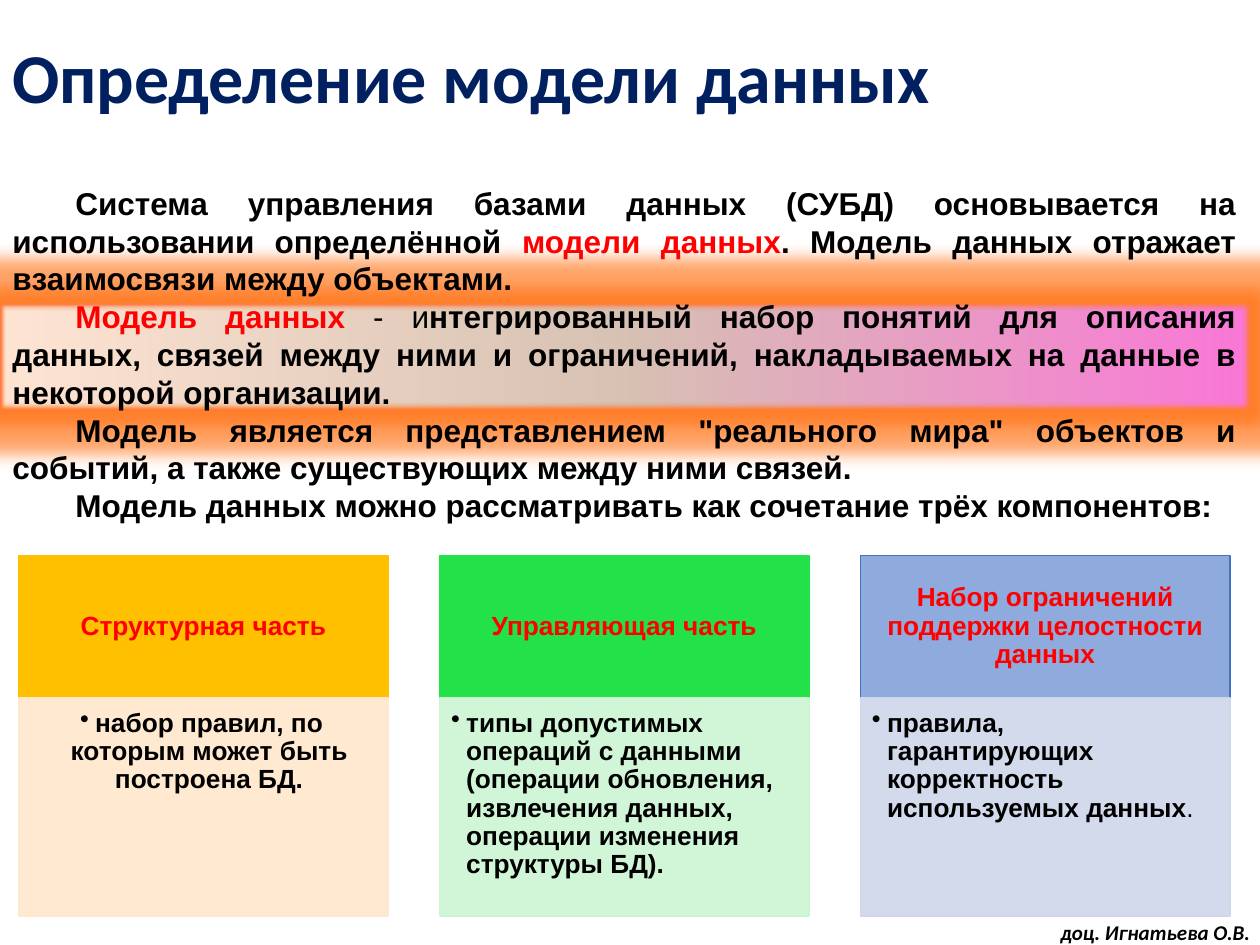
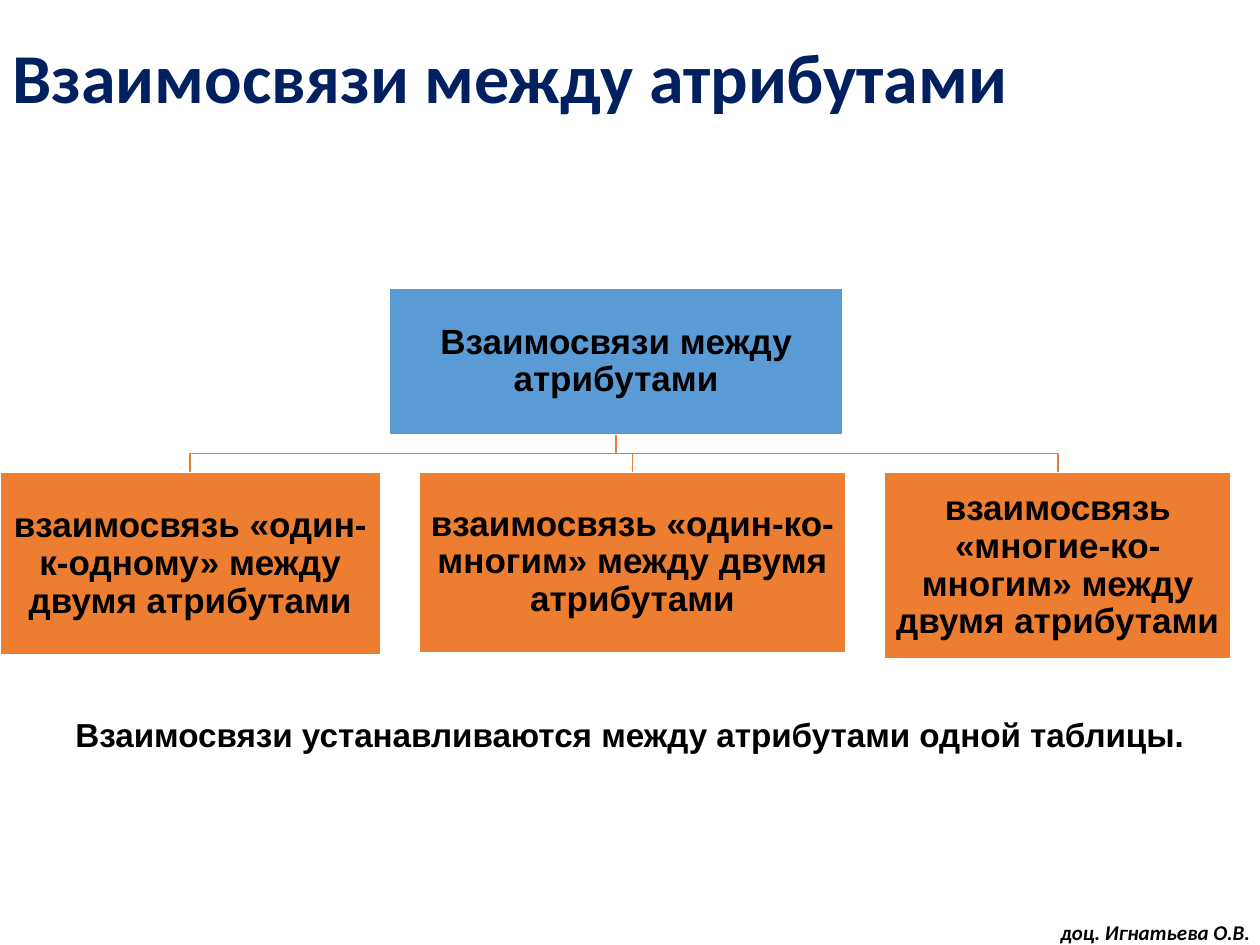
from lxml.etree import SubElement
from pptx import Presentation
from pptx.dml.color import RGBColor
from pptx.enum.shapes import MSO_SHAPE
from pptx.enum.text import MSO_ANCHOR, PP_ALIGN
from pptx.oxml import parse_xml
from pptx.oxml.ns import nsdecls, qn
from pptx.util import Inches, Pt

WIDTH, HEIGHT = 10, 7.5
BODY = 9.91
NAVY, RED, BLACK, WHITE = "002060", "FF0000", "000000", "FFFFFF"
PINK, ORANGE, BLUE = "FA76D7", "ED7D31", "5B9BD5"
INSET = (0.1, 0.05, 0.1, 0.05)

AUTHOR = "доц. Игнатьева О.В."

# A run is plain text or (text, colour, bold).
MODEL = "Определение модели данных"
INTRO = [
    ["Система управления базами данных (СУБД) основывается на использовании определённой ",
     ("модели данных", RED, True),
     ". Модель данных отражает взаимосвязи между объектами. "],
    [("Модель данных ", RED, True), ("- и", BLACK, False),
     "нтегрированный набор понятий для описания данных, связей между ними и ограничений, "
     "накладываемых на данные в некоторой организации."],
    ["Модель является представлением \"реального мира\" объектов и событий, "
     "а также существующих между ними связей. "],
    ["Модель данных можно рассматривать как сочетание трёх компонентов:"],
]
# Head, detail runs, head fill, head line, detail fill, detail alignment
PARTS = [
    ("Структурная часть", ["набор правил, по которым может быть построена БД."],
     "FFC000", "FFC000", "FFE8CC", PP_ALIGN.CENTER),
    ("Управляющая часть",
     ["типы допустимых операций с данными (операции обновления, извлечения данных, "
      "операции изменения структуры БД)."],
     "23E148", "23E148", "CCF6D3", PP_ALIGN.LEFT),
    ("Набор ограничений поддержки целостности данных",
     ["правила, гарантирующих корректность используемых данных", (".", BLACK, False)],
     "8FAADC", "4472C4", "CFD6EA", PP_ALIGN.LEFT),
]
LINKS = "Взаимосвязи между атрибутами"
# Kind of link, width, height
KINDS = [
    ("взаимосвязь «один-к-одному» между двумя атрибутами", 3.02, 1.45),
    ("взаимосвязь «один-ко-многим» между двумя атрибутами", 3.38, 1.43),
    ("взаимосвязь «многие-ко-многим» между двумя атрибутами", 2.75, 1.48),
]
NOTE = "Взаимосвязи устанавливаются между атрибутами одной таблицы."


def rgb(code):
    return RGBColor.from_string(code)


def write(shape, paras, size, color=BLACK, face="Arial", align=PP_ALIGN.LEFT,
          anchor=MSO_ANCHOR.TOP, inset=INSET, space=None, first=0, bullet=False,
          italic=False, wrap=True):
    """Fill a shape with paragraphs, each a list of runs."""
    frame = shape.text_frame
    frame.word_wrap = wrap
    frame.vertical_anchor = anchor
    (frame.margin_left, frame.margin_top,
     frame.margin_right, frame.margin_bottom) = map(Inches, inset)
    for i, runs in enumerate(paras):
        para = frame.add_paragraph() if i else frame.paragraphs[0]
        para.alignment = align
        if space:
            para.line_spacing = space
        props = para._p.get_or_add_pPr()
        props.set("indent", str(Inches(first)))
        if bullet:
            props.set("marL", str(Inches(-first)))
            SubElement(props, qn("a:buChar")).set("char", "•")
        font = para.font
        font.size, font.name, font.italic = Pt(size), face, italic
        for item in runs:
            text, tint, bold = (item, color, True) if isinstance(item, str) else item
            run = para.add_run()
            run.text = text
            run.font.bold = bold
            run.font.color.rgb = rgb(tint)


def label(slide, x, y, w, h, paras, size, **style):
    box = slide.shapes.add_textbox(*map(Inches, (x, y, w, h)))
    write(box, paras, size, **style)


def panel(slide, x, y, w, h, fill, line, alpha=None):
    box = slide.shapes.add_shape(MSO_SHAPE.RECTANGLE, *map(Inches, (x, y, w, h)))
    box.shadow.inherit = False
    box.fill.solid()
    box.fill.fore_color.rgb = rgb(fill)
    box.line.color.rgb = rgb(line)
    box.line.width = Pt(1)
    if alpha:
        tint = box._element.spPr.find(qn("a:solidFill"))[0]
        SubElement(tint, qn("a:alpha")).set("val", str(alpha * 1000))
    return box


def glow(slide, x, y, w, h):
    """Add a gradient band with a soft orange halo."""
    band = panel(slide, x, y, w, h, PINK, PINK)
    props = band._element.spPr
    stops = "".join(
        f'<a:gs pos="{pos * 1000}"><a:srgbClr val="{tint}"/></a:gs>'
        for pos, tint in ((0, PINK), (50, "D6C1B2"), (100, "FEE4D3")))
    props.replace(props.find(qn("a:solidFill")), parse_xml(
        f'<a:gradFill {nsdecls("a")}><a:gsLst>{stops}</a:gsLst>'
        '<a:lin ang="10800000" scaled="0"/></a:gradFill>'))
    props.replace(props.find(qn("a:effectLst")), parse_xml(
        f'<a:effectLst {nsdecls("a")}><a:glow rad="228600"><a:srgbClr val="FF6600">'
        '<a:alpha val="60000"/></a:srgbClr></a:glow><a:softEdge rad="31750"/></a:effectLst>'))


def branch(slide, points):
    points = [tuple(map(Inches, point)) for point in points]
    form = slide.shapes.build_freeform(*points[0])
    form.add_line_segments(points[1:], close=False)
    path = form.convert_to_shape()
    path.shadow.inherit = False
    path.fill.background()
    path.line.color.rgb = rgb(ORANGE)
    path.line.width = Pt(1)


def start(deck, title):
    """Add a slide with its title and footer."""
    slide = deck.slides.add_slide(deck.slide_layouts[6])
    label(slide, 0, 0.11, WIDTH, 1.07, [[title]], 40, color=NAVY, face="Calibri",
          anchor=MSO_ANCHOR.MIDDLE, space=0.9)
    label(slide, 8.32, 7.25, 1.73, 0.3, [[AUTHOR]], 12, face="Calibri",
          italic=True, wrap=False)
    return slide


def model(deck):
    slide = start(deck, MODEL)
    glow(slide, 0, 2.41, BODY, 0.83)
    label(slide, 0, 1.41, BODY, 3, INTRO, 18, align=PP_ALIGN.JUSTIFY, first=0.5)
    left, top, wide, head, rest, step = 0.15, 4.41, 2.93, 1.13, 1.73, 3.34
    for i, (name, runs, fill, line, pale, align) in enumerate(PARTS):
        x = left + i * step
        box = panel(slide, x, top, wide, head, fill, line)
        write(box, [[name]], 15, color=RED, align=PP_ALIGN.CENTER, space=0.9,
              anchor=MSO_ANCHOR.MIDDLE, inset=(0.12, 0.07, 0.12, 0.07))
        box = panel(slide, x, top + head, wide, rest, pale, pale, alpha=90)
        write(box, [runs], 15, align=align, space=0.9, first=-0.12, bullet=True,
              inset=(0.09, 0.09, 0.12, 0.13))


def links(deck):
    slide = start(deck, LINKS)
    left, top, wide, high = 3.09, 2.29, 3.6, 1.16
    row, gap = 3.75, 0.31
    root, base = left + wide / 2, top + high
    bend = (base + row) / 2
    boxes = [(LINKS, left, top, wide, high, BLUE)]
    x = 0
    for name, w, h in KINDS:
        mid = x + w / 2
        branch(slide, [(root, base), (root, bend), (mid, bend), (mid, row)])
        boxes.append((name, x, row, w, h, ORANGE))
        x += w + gap
    for name, *place, fill in boxes:
        box = panel(slide, *place, fill, WHITE)
        write(box, [[name]], 20, align=PP_ALIGN.CENTER, space=0.9,
              anchor=MSO_ANCHOR.MIDDLE, inset=(0.01,) * 4)
    label(slide, 0, 5.62, BODY, 1, [[NOTE]], 19, align=PP_ALIGN.JUSTIFY, first=0.5)


def main():
    deck = Presentation()
    deck.slide_width, deck.slide_height = Inches(WIDTH), Inches(HEIGHT)
    model(deck)
    links(deck)
    deck.save("out.pptx")


if __name__ == "__main__":
    main()
